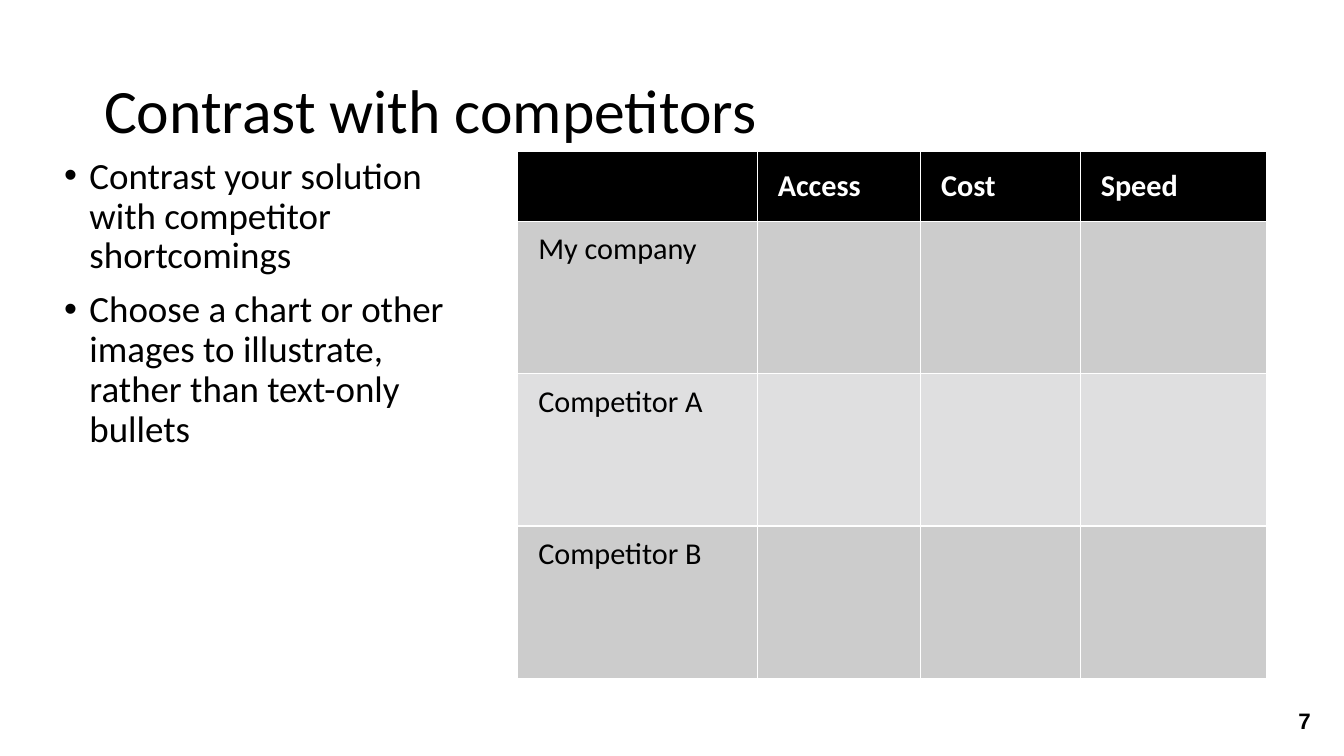
"""Build the slide that contrasts a company with its competitors."""
from lxml import etree
from pptx import Presentation
from pptx.dml.color import RGBColor
from pptx.enum import text as tx
from pptx.oxml import ns
from pptx.util import Inches, Pt

TITLE = "Contrast with competitors"
POINTS = [
    "Contrast your solution with competitor shortcomings",
    "Choose a chart or other images to illustrate, rather than text-only bullets",
]
HEADS = ["", "Access", "Cost", "Speed"]
NAMES = ["My company", "Competitor A", "Competitor B"]
GRID = [HEADS] + [[name, "", "", ""] for name in NAMES]
COLS = [1.98, 1.35, 1.32, 1.54]
ROWS = [0.58] + [1.26] * len(NAMES)
BANDS = ["CCCCCC", "DFDFE0"]
BLACK, WHITE = "000000", "FFFFFF"


def tint(hue):
    return RGBColor.from_string(hue)


def place(shape, *box):
    shape.left, shape.top, shape.width, shape.height = map(Inches, box)


def write(para, words, size, color=BLACK, bold=False, face="Calibri"):
    run = para.add_run()
    run.text = words
    font = run.font
    font.name, font.size, font.bold = face, Pt(size), bold
    font.color.rgb = tint(color)


def setup(frame, anchor):
    frame.word_wrap = True
    frame.auto_size = tx.MSO_AUTO_SIZE.NONE
    frame.vertical_anchor = anchor


def bullet(para):
    props = para._p.get_or_add_pPr()
    props.set("marL", str(Inches(0.21)))
    props.set("indent", str(Inches(-0.21)))
    etree.SubElement(props, ns.qn("a:buFont"), typeface="Arial")
    etree.SubElement(props, ns.qn("a:buChar"), char="•")


def border(cell):
    props = cell._tc.get_or_add_tcPr()
    for spot, side in enumerate(["lnL", "lnR", "lnT", "lnB"]):
        line = etree.Element(ns.qn("a:" + side), w=str(Pt(1)))
        fill = etree.SubElement(line, ns.qn("a:solidFill"))
        etree.SubElement(fill, ns.qn("a:srgbClr"), val=WHITE)
        props.insert(spot, line)


def add_title(slide):
    title = slide.shapes.title
    place(title, 0.76, 0.33, 9.58, 1.21)
    setup(title.text_frame, tx.MSO_ANCHOR.MIDDLE)
    para = title.text_frame.paragraphs[0]
    para.alignment = tx.PP_ALIGN.LEFT
    para.line_spacing = 0.9
    write(para, TITLE, 36.7)


def add_points(slide):
    body = slide.placeholders[1]
    place(body, 0.43, 1.25, 3.56, 3.92)
    frame = body.text_frame
    setup(frame, tx.MSO_ANCHOR.TOP)
    for i, point in enumerate(POINTS):
        para = frame.add_paragraph() if i else frame.paragraphs[0]
        para.line_spacing = 0.9
        para.space_before = Pt(8.3)
        bullet(para)
        write(para, point, 22)


def add_grid(slide):
    box = map(Inches, (4.28, 1.25, sum(COLS), sum(ROWS)))
    table = slide.shapes.add_table(len(ROWS), len(COLS), *box).table
    for col, width in zip(table.columns, COLS):
        col.width = Inches(width)
    for r, (row, height) in enumerate(zip(table.rows, ROWS)):
        row.height = Inches(height)
        head = r == 0
        for cell, words in zip(row.cells, GRID[r]):
            cell.margin_left = cell.margin_right = Inches(0.17)
            cell.margin_top = cell.margin_bottom = Inches(0.08)
            cell.vertical_anchor = tx.MSO_ANCHOR.MIDDLE if head else tx.MSO_ANCHOR.TOP
            cell.fill.solid()
            cell.fill.fore_color.rgb = tint(BLACK if head else BANDS[(r - 1) % 2])
            border(cell)
            if words:
                write(cell.text_frame.paragraphs[0], words, 18, WHITE if head else BLACK, head)


def add_number(slide):
    box = map(Inches, (10.46, 5.86, 0.65, 0.21))
    frame = slide.shapes.add_textbox(*box).text_frame
    setup(frame, tx.MSO_ANCHOR.BOTTOM)
    frame.margin_left = frame.margin_right = 0
    frame.margin_top = frame.margin_bottom = 0
    para = frame.paragraphs[0]
    para.alignment = tx.PP_ALIGN.CENTER
    write(para, "7", 13.3, bold=True, face="Arial")


def main():
    deck = Presentation()
    deck.slide_width, deck.slide_height = Inches(11.11), Inches(6.25)
    slide = deck.slides.add_slide(deck.slide_layouts[1])
    add_number(slide)
    add_points(slide)
    add_title(slide)
    add_grid(slide)
    deck.save("out.pptx")


if __name__ == "__main__":
    main()
